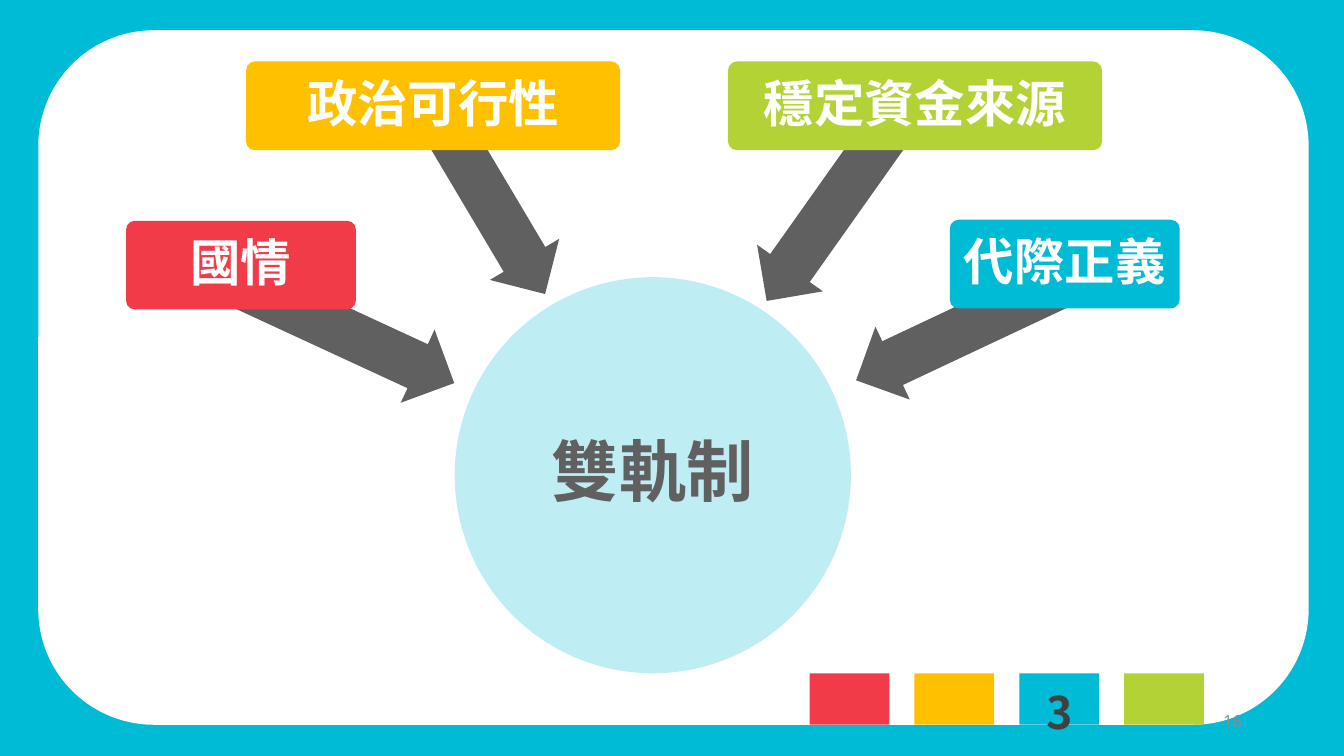
from lxml import etree
from pptx import Presentation
from pptx.dml.color import RGBColor
from pptx.enum import shapes as kinds, text as txt
from pptx.oxml import ns
from pptx.util import Inches, Pt

COLORS = {
    "cyan": "00BBD6", "white": "FFFFFF", "red": "F23B49", "green": "B3D236",
    "amber": "FFC000", "gray": "606060", "dark": "404040", "pale": "8C8C8C",
}
CJK = "Noto Sans CJK SC"
SHAPE = kinds.MSO_SHAPE
ALIGN = txt.PP_ALIGN

FACTORS = [
    ("國情", "red", (1.25, 2.19, 2.28, 0.88), (2.14, 2.88, 2.48, 0.8), 204.8),
    ("政治可行性", "amber", (2.44, 0.61, 3.71, 0.88), (3.76, 1.58, 2.18, 0.8), 239.3),
    ("穩定資金來源", "green", (7.22, 0.61, 3.71, 0.88), (7.1, 1.61, 2.39, 0.8), 305.3),
    ("代際正義", "cyan", (9.42, 2.18, 2.28, 0.88), (8.37, 2.83, 2.55, 0.8), 334.8),
]


def inches(box):
    """Convert a box of plain numbers to lengths."""
    return [Inches(value) for value in box]


def add_filled(slide, kind, box, color):
    """Add a flat preset shape without outline or shadow."""
    shape = slide.shapes.add_shape(kind, *inches(box))
    shape.shadow.inherit = False
    shape.fill.solid()
    shape.fill.fore_color.rgb = RGBColor.from_string(COLORS[color])
    shape.line.fill.background()
    return shape


def write(shape, words, size, color, font=CJK, bold=True, align=ALIGN.CENTER,
          inset=0.1, spacing=1.0):
    """Put one vertically centred, formatted line of text into a shape."""
    frame = shape.text_frame
    frame.text = words
    frame.vertical_anchor = txt.MSO_ANCHOR.MIDDLE
    frame.margin_left = frame.margin_right = Inches(inset)
    frame.margin_top = frame.margin_bottom = Inches(inset / 2)
    paragraph = frame.paragraphs[0]
    paragraph.alignment = align
    paragraph.line_spacing = spacing
    style = paragraph.runs[0].font
    style.size, style.bold, style.name = Pt(size), bold, font
    style.color.rgb = RGBColor.from_string(COLORS[color])
    east_asian = etree.Element(ns.qn("a:ea"), typeface=font)
    paragraph.runs[0]._r.rPr.find(ns.qn("a:latin")).addnext(east_asian)


def add_backdrop(slide, box):
    """Colour the background and lay the rounded white card on it."""
    slide.background.fill.solid()
    slide.background.fill.fore_color.rgb = RGBColor.from_string(COLORS["cyan"])
    add_filled(slide, SHAPE.ROUNDED_RECTANGLE, box, "white")


def add_page_number(slide, box):
    """Write the page number at the right of its box."""
    page = slide.shapes.add_textbox(*inches(box))
    page.text_frame.word_wrap = True
    write(page, "16", 12, "pale", "Open Sans", False, ALIGN.RIGHT)


def add_section_marker(slide, box, current):
    """Draw the four section swatches and number the current one."""
    left, top, width, height = box
    swatch_width = 0.79
    step = (width - swatch_width) / 3
    for index, color in enumerate(("red", "amber", "cyan", "green")):
        add_filled(slide, SHAPE.RECTANGLE,
                   (left + index * step, top, swatch_width, height), color)
    number_left = left + (current - 1) * step + 0.18
    number = slide.shapes.add_textbox(*inches((number_left, top + 0.09, 0.45, 0.64)))
    number.text_frame.word_wrap = False
    write(number, str(current), 32, "dark", inset=0)
    number.text_frame.margin_bottom = Inches(0.07)


def add_core(slide, box):
    """Draw the translucent central circle with its label."""
    core = add_filled(slide, SHAPE.OVAL, box, "cyan")
    tint = core._element.spPr.find(ns.qn("a:solidFill"))[0]
    etree.SubElement(tint, ns.qn("a:alpha"), val="25000")
    write(core, "雙軌制", 48, "gray", inset=0.03, spacing=0.9)


def add_factor(slide, words, color, box, arrow_box, angle):
    """Draw one factor label over the arrow that leads to the core."""
    arrow = add_filled(slide, SHAPE.LEFT_ARROW, arrow_box, "gray")
    arrow.adjustments[0], arrow.adjustments[1] = 0.6, 0.5
    arrow.rotation = angle
    label = add_filled(slide, SHAPE.ROUNDED_RECTANGLE, box, color)
    label.adjustments[0] = 0.1
    write(label, words, 36, "white", spacing=0.9)


def main():
    """Build and save the slide."""
    deck = Presentation()
    deck.slide_width, deck.slide_height = Inches(13.33), Inches(7.5)
    slide = deck.slides.add_slide(deck.slide_layouts[6])
    add_backdrop(slide, (0.38, 0.3, 12.6, 6.89))
    add_page_number(slide, (9.42, 6.95, 3, 0.4))
    add_section_marker(slide, (8.03, 6.68, 3.91, 0.51), 3)
    add_core(slide, (4.51, 2.75, 3.93, 3.93))
    for factor in FACTORS:
        add_factor(slide, *factor)
    deck.save("out.pptx")


if __name__ == "__main__":
    main()
